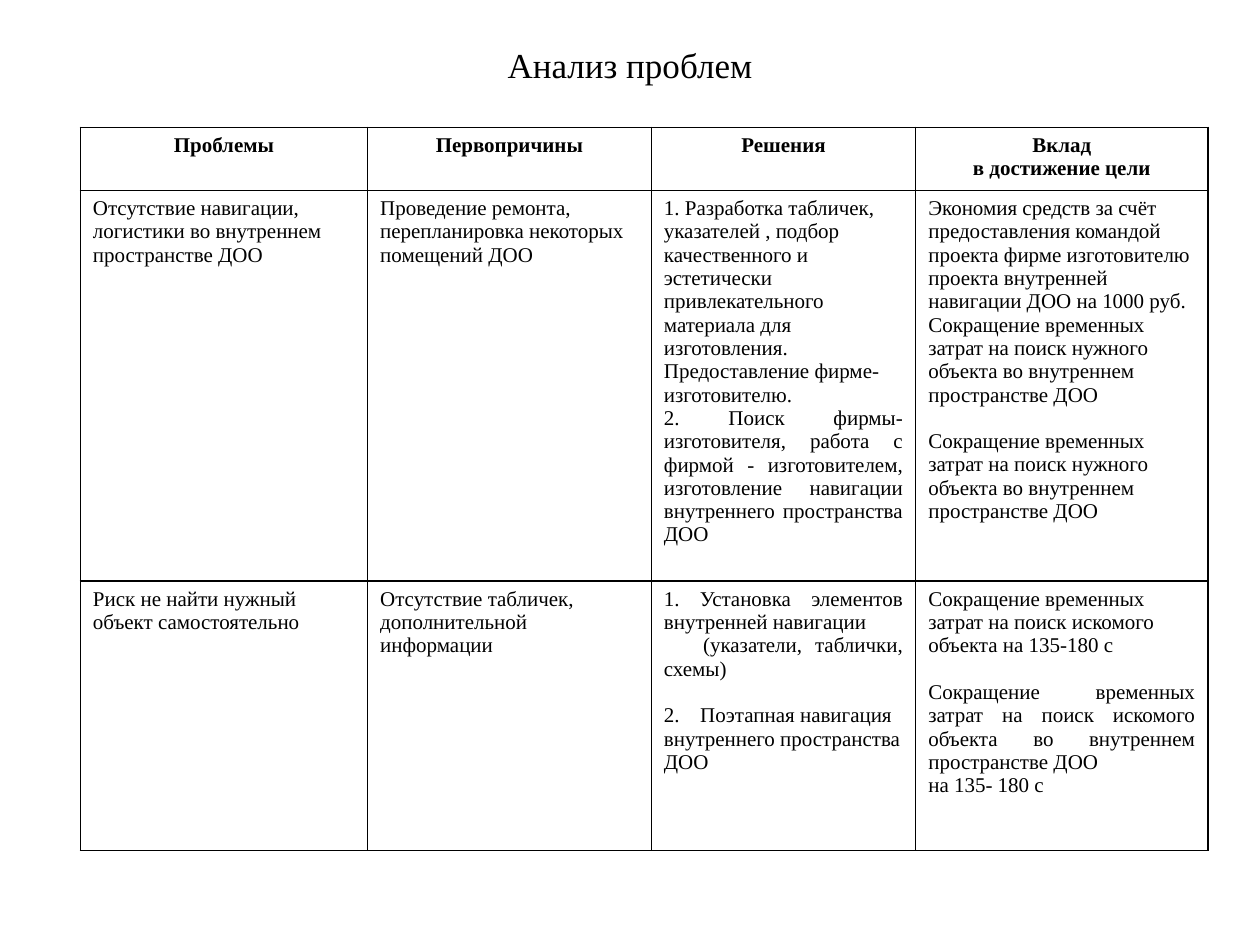
from dataclasses import dataclass

from lxml import etree
from pptx import Presentation
from pptx.dml.color import RGBColor
from pptx.enum.text import MSO_ANCHOR, PP_ALIGN
from pptx.oxml.ns import qn
from pptx.util import Cm, Pt

LEFT, CENTER, JUSTIFY = PP_ALIGN.LEFT, PP_ALIGN.CENTER, PP_ALIGN.JUSTIFY
MIDDLE = MSO_ANCHOR.MIDDLE


@dataclass(frozen=True)
class Theme:
    font: str = "Times New Roman"
    ink: RGBColor = RGBColor(0, 0, 0)
    paper: RGBColor = RGBColor(255, 255, 255)
    title_size: Pt = Pt(20)
    body_size: Pt = Pt(12)
    line_gap: Pt = Pt(13.3)
    border: Pt = Pt(1)


@dataclass(frozen=True)
class Para:
    text: str
    align: PP_ALIGN = LEFT
    gap: bool = False
    indent: float = 0
    tab: float = 0


class SlideBuilder:
    def __init__(self, slide, theme):
        self.s, self.theme = slide, theme

    def add_paragraphs(self, tf, paras, size, bold=False):
        for i, para in enumerate(paras):
            p = tf.add_paragraph() if i else tf.paragraphs[0]
            p.alignment = para.align
            if para.gap:
                p.space_before = self.theme.line_gap
            pPr = p._p.get_or_add_pPr()
            if para.indent:
                pPr.set("indent", str(Cm(para.indent)))
            if para.tab:
                tabs = etree.SubElement(pPr, qn("a:tabLst"))
                etree.SubElement(tabs, qn("a:tab"), pos=str(Cm(para.tab)), algn="l")
            r = p.add_run()
            r.text = para.text
            r.font.name, r.font.size, r.font.bold = self.theme.font, size, bold
            r.font.color.rgb = self.theme.ink

    def title(self, text, left, top, width, height):
        sp = self.s.shapes.add_textbox(Cm(left), Cm(top), Cm(width), Cm(height))
        tf = sp.text_frame
        tf.word_wrap = True
        tf.vertical_anchor = MIDDLE
        self.add_paragraphs(tf, [Para(text, CENTER)], self.theme.title_size)

    def outline(self, cell):
        """Draw all four borders of a cell; they must precede its fill."""
        tcPr = cell._tc.get_or_add_tcPr()
        for side in ("a:lnL", "a:lnR", "a:lnT", "a:lnB"):
            ln = etree.SubElement(tcPr, qn(side), w=str(self.theme.border))
            fill = etree.SubElement(ln, qn("a:solidFill"))
            etree.SubElement(fill, qn("a:srgbClr"), val=str(self.theme.ink))

    def table(self, rows, left, top, widths, heights):
        frame = self.s.shapes.add_table(
            len(heights), len(widths), Cm(left), Cm(top), Cm(sum(widths)), Cm(sum(heights)))
        table = frame.table
        for column, width in zip(table.columns, widths):
            column.width = Cm(width)
        for row, height in zip(table.rows, heights):
            row.height = Cm(height)
        for i, row in enumerate(rows):
            for j, paras in enumerate(row):
                cell = table.cell(i, j)
                self.outline(cell)
                cell.fill.solid()
                cell.fill.fore_color.rgb = self.theme.paper
                self.add_paragraphs(cell.text_frame, paras, self.theme.body_size, bold=i == 0)


HEADER = [
    [Para("Проблемы", CENTER)],
    [Para("Первопричины", CENTER)],
    [Para("Решения", CENTER)],
    [Para("Вклад", CENTER), Para("в достижение цели", CENTER)],
]
NAVIGATION = [
    [Para("Отсутствие навигации, логистики во внутреннем пространстве ДОО")],
    [Para("Проведение ремонта, перепланировка некоторых помещений ДОО")],
    [Para("1. Разработка табличек, указателей , подбор качественного и эстетически "
          "привлекательного материала для изготовления. Предоставление фирме- изготовителю."),
     Para("2. Поиск фирмы-изготовителя, работа с фирмой - изготовителем, изготовление "
          "навигации внутреннего пространства ДОО", JUSTIFY)],
    [Para("Экономия средств за счёт предоставления командой проекта фирме изготовителю "
          "проекта внутренней навигации ДОО на 1000 руб."),
     Para("Сокращение временных затрат на поиск нужного объекта во внутреннем "
          "пространстве ДОО"),
     Para("Сокращение временных затрат на поиск нужного объекта во внутреннем "
          "пространстве ДОО", gap=True)],
]
SEARCH = [
    [Para("Риск не найти нужный объект самостоятельно")],
    [Para("Отсутствие табличек, дополнительной информации")],
    [Para("1. Установка элементов внутренней навигации", JUSTIFY),
     Para("(указатели, таблички, схемы)", JUSTIFY, indent=0.79),
     Para("2.\tПоэтапная навигация внутреннего пространства ДОО", gap=True, tab=0.73)],
    [Para("Сокращение временных затрат на поиск искомого объекта на 135-180 с"),
     Para("Сокращение временных затрат на поиск искомого объекта во внутреннем "
          "пространстве ДОО", JUSTIFY, gap=True),
     Para("на 135- 180 с", JUSTIFY)],
]


def main():
    prs = Presentation()
    prs.slide_width, prs.slide_height = Cm(25.4), Cm(19.05)
    slide = SlideBuilder(prs.slides.add_slide(prs.slide_layouts[6]), Theme())
    slide.title("Анализ проблем", 1.27, 0, 22.86, 2.6)
    slide.table([HEADER, NAVIGATION, SEARCH], 1.62, 2.57,
                widths=[5.79, 5.72, 5.33, 5.89], heights=[1.19, 7.78, 5.43])
    prs.save("out.pptx")


if __name__ == "__main__":
    main()
